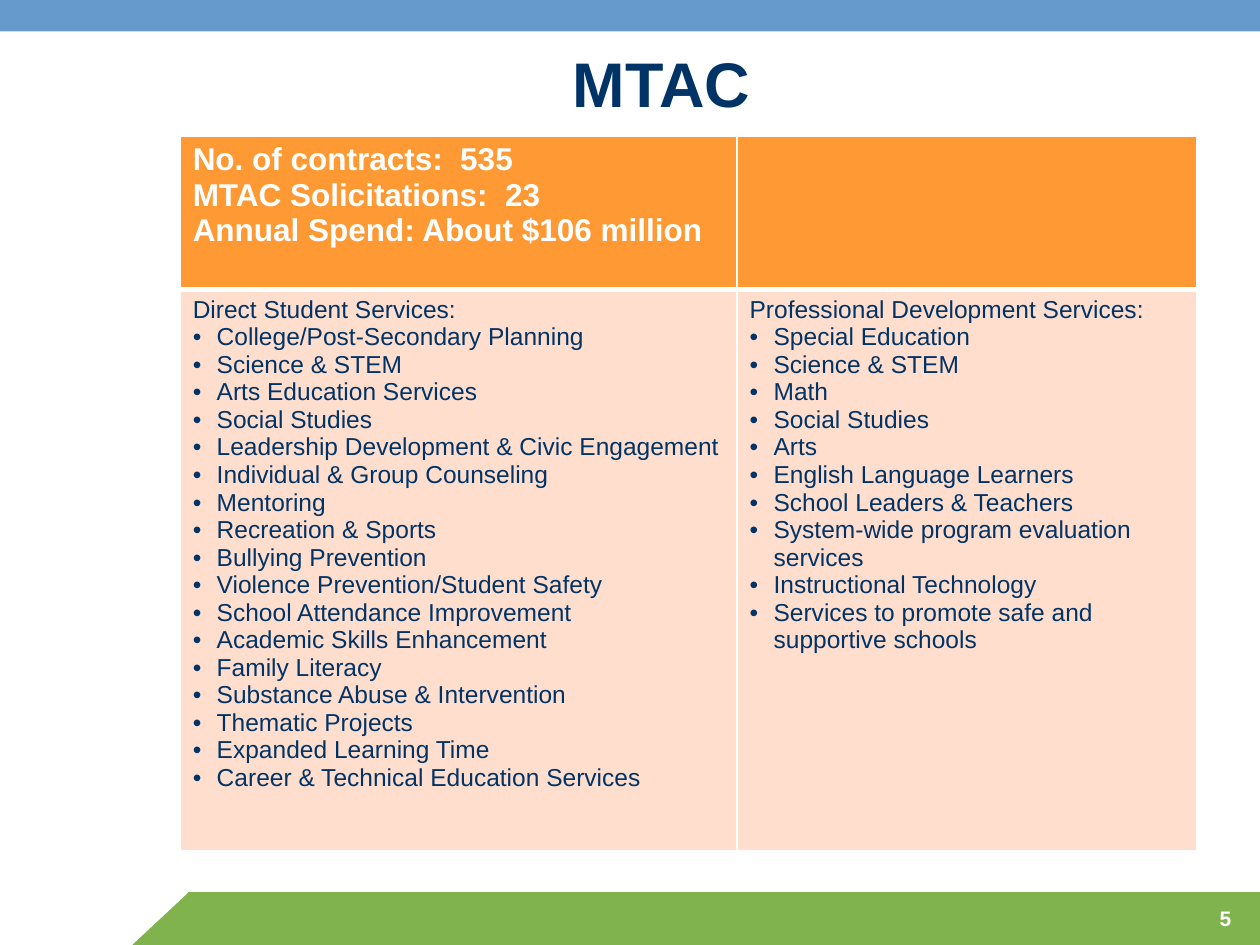
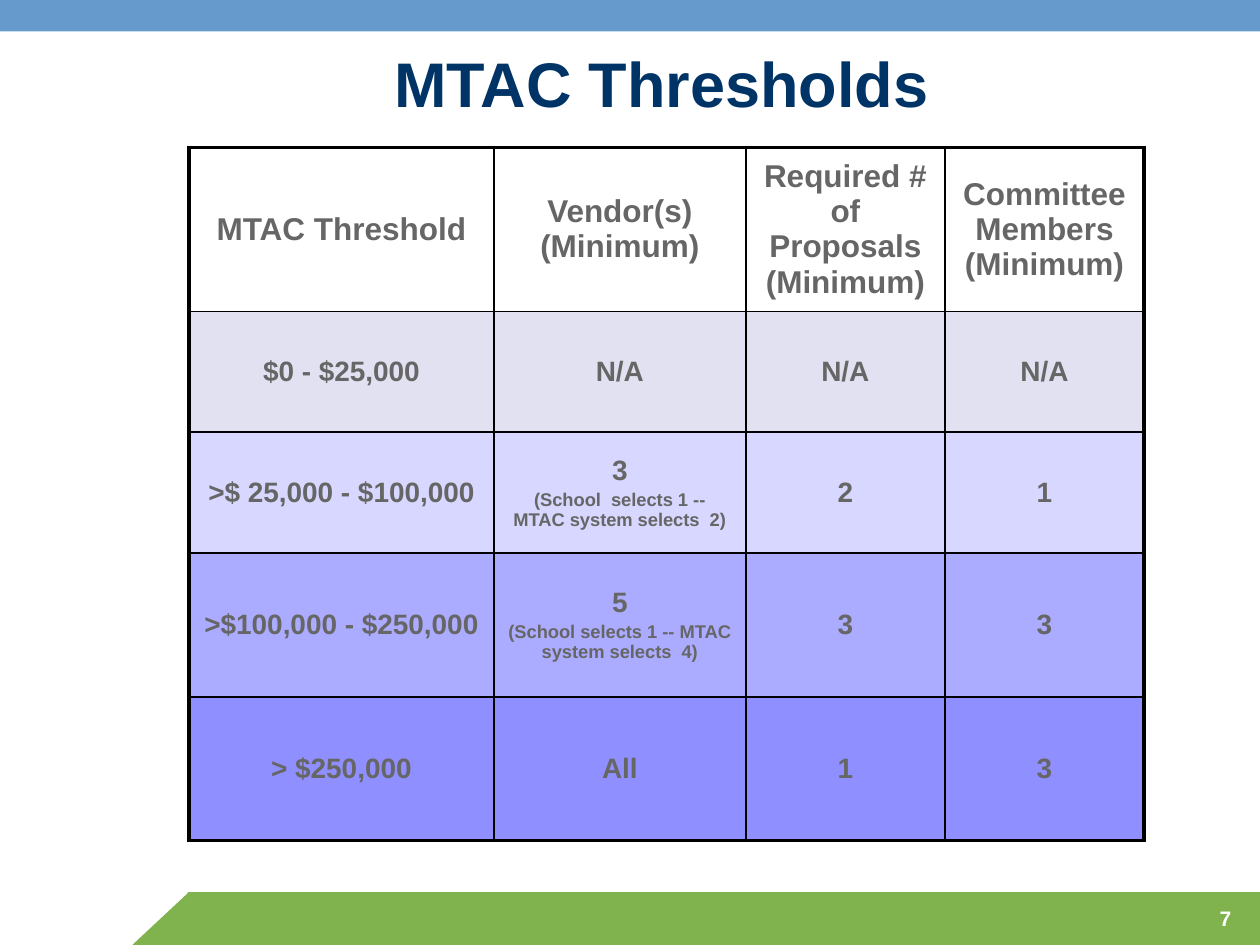
from lxml.etree import SubElement
from pptx import Presentation
from pptx.dml.color import RGBColor
from pptx.enum.shapes import MSO_SHAPE
from pptx.enum.text import MSO_ANCHOR, PP_ALIGN
from pptx.oxml.ns import qn
from pptx.util import Inches, Pt

RECT, TRIANGLE = MSO_SHAPE.RECTANGLE, MSO_SHAPE.RIGHT_TRIANGLE
TOP, MIDDLE, BOTTOM = MSO_ANCHOR.TOP, MSO_ANCHOR.MIDDLE, MSO_ANCHOR.BOTTOM
LEFT, CENTER, RIGHT = PP_ALIGN.LEFT, PP_ALIGN.CENTER, PP_ALIGN.RIGHT

FONT = "Arial"
WHITE, BLACK, NAVY, GRAY = "FFFFFF", "000000", "003366", "666666"
BLUE, GREEN, ORANGE, PEACH = "6699CC", "80B34D", "FF9933", "FFDECE"

TITLE = {"size": 36, "bold": True, "color": NAVY, "align": CENTER}
NUMBER = {"size": 12, "bold": True, "color": WHITE, "align": RIGHT}
SUMMARY = {"size": 18, "bold": True, "color": WHITE, "align": LEFT}
SERVICE = {"size": 14, "bold": False, "color": NAVY, "align": LEFT}
BULLET = {**SERVICE, "bullet": "•"}
HEADING = {"size": 18, "bold": True, "color": GRAY, "align": CENTER}
VALUE = {**HEADING, "size": 16}
NOTE = {**HEADING, "size": 10.5, "before": 2.1}

STUDENT_SERVICES = [
    "College/Post-Secondary Planning", "Science & STEM",
    "Arts Education Services", "Social Studies",
    "Leadership Development & Civic Engagement",
    "Individual & Group Counseling", "Mentoring", "Recreation & Sports",
    "Bullying Prevention", "Violence Prevention/Student Safety",
    "School Attendance Improvement", "Academic Skills Enhancement",
    "Family Literacy", "Substance Abuse & Intervention",
    "Thematic Projects", "Expanded Learning Time",
    "Career & Technical Education Services",
]
STAFF_SERVICES = [
    "Special Education", "Science & STEM", "Math", "Social Studies", "Arts",
    "English Language Learners", "School Leaders & Teachers",
    "System-wide program evaluation services", "Instructional Technology",
    "Services to promote safe and supportive schools",
]
THRESHOLD_HEADINGS = [
    "MTAC Threshold", "Vendor(s) (Minimum)",
    "Required # of Proposals (Minimum)", "Committee Members (Minimum)",
]
THRESHOLDS = [
    ["$0 - $25,000", "N/A", "N/A", "N/A"],
    [">$ 25,000 - $100,000",
     "3|(School  selects 1 -- MTAC system selects  2)", "2", "1"],
    [">$100,000 - $250,000",
     "5|(School selects 1 -- MTAC system selects  4)", "3", "3"],
    ["> $250,000", "All", "1", "3"],
]
THRESHOLD_FILLS = [None, "E1E1F1", "D7D7FF", "ABABFF", "8F8FFF"]


def rgb(color):
    return RGBColor.from_string(color)


class Deck:
    """Hold the shared style and the slide being built."""

    def __init__(self):
        self.prs = Presentation()
        self.prs.slide_width, self.prs.slide_height = Inches(10), Inches(7.5)
        self.slide = None

    def add_slide(self, title, number):
        self.slide = self.prs.slides.add_slide(self.prs.slide_layouts[5])
        self.band(RECT, 1.49, 7.08, 8.51, 0.42, GREEN)
        corner = self.band(TRIANGLE, 1.05, 7.08, 0.45, 0.42, GREEN)
        corner.element.spPr.get_or_add_xfrm().set("flipH", "1")
        self.band(RECT, 0, 0, 10, 0.25, BLUE)
        self.title(title)
        self.page_number(number)

    def band(self, kind, x, y, w, h, color):
        s = self.slide.shapes.add_shape(
            kind, Inches(x), Inches(y), Inches(w), Inches(h))
        s.shadow.inherit = False
        s.fill.solid()
        s.fill.fore_color.rgb = rgb(color)
        s.line.fill.background()
        return s

    def title(self, text):
        s = self.slide.shapes.title
        place = {"left": 1, "top": 0.33, "width": 8.5, "height": 0.67}
        for name, value in place.items():
            setattr(s, name, Inches(value))
        s.text_frame.word_wrap = True
        s.text_frame.vertical_anchor = BOTTOM
        self.paragraphs(s.text_frame, [(text, TITLE)])

    def page_number(self, number):
        s = self.slide.shapes.add_textbox(
            Inches(8.79), Inches(7.14), Inches(1.08), Inches(0.25))
        s.text_frame.word_wrap = True
        self.paragraphs(s.text_frame, [(str(number), NUMBER)])

    def paragraphs(self, tf, lines):
        for i, (text, style) in enumerate(lines):
            p = tf.add_paragraph() if i else tf.paragraphs[0]
            if "bullet" in style:
                pPr = p._p.get_or_add_pPr()
                indent = Inches(0.19)
                pPr.set("marL", str(indent))
                pPr.set("indent", str(-indent))
                SubElement(pPr, qn("a:buFont"), typeface=FONT)
                SubElement(pPr, qn("a:buChar"), char=style["bullet"])
            p.alignment = style["align"]
            if "before" in style:
                p.space_before = Pt(style["before"])
            r = p.add_run()
            r.text = text
            font = {"name": FONT, "size": Pt(style["size"]), "bold": style["bold"]}
            for name, value in font.items():
                setattr(r.font, name, value)
            r.font.color.rgb = rgb(style["color"])

    def borders(self, cell, color, widths):
        tcPr = cell._tc.get_or_add_tcPr()
        for side, width in widths.items():
            ln = SubElement(tcPr, qn(f"a:ln{side}"), w=str(Pt(width)))
            fill = SubElement(ln, qn("a:solidFill"))
            SubElement(fill, qn("a:srgbClr"), val=color)

    def table(self, x, y, cols, rows, cells, fills, anchor, color, outer, across):
        table = self.slide.shapes.add_table(
            len(rows), len(cols), Inches(x), Inches(y),
            Inches(sum(cols)), Inches(sum(rows))).table
        table.first_row = table.horz_banding = False
        for column, width in zip(table.columns, cols):
            column.width = Inches(width)
        for row, height in zip(table.rows, rows):
            row.height = Inches(height)
        last_row, last_col = len(rows) - 1, len(cols) - 1
        for i, row in enumerate(cells):
            for j, lines in enumerate(row):
                cell = table.cell(i, j)
                self.borders(cell, color, {
                    "L": 1 if j else outer,
                    "R": 1 if j < last_col else outer,
                    "T": across if i else outer,
                    "B": across if i < last_row else outer,
                })
                if fills[i]:
                    cell.fill.solid()
                    cell.fill.fore_color.rgb = rgb(fills[i])
                else:
                    cell.fill.background()
                cell.vertical_anchor = anchor
                self.paragraphs(cell.text_frame, lines)


def service_list(heading, services):
    return [(heading, SERVICE)] + [(name, BULLET) for name in services]


def threshold_cell(text):
    return list(zip(text.split("|"), (VALUE, NOTE)))


def build_overview(deck):
    deck.add_slide("MTAC", 5)
    summary = [(line, SUMMARY) for line in (
        "No. of contracts:  535",
        "MTAC Solicitations:  23",
        "Annual Spend: About $106 million",
    )]
    services = [
        service_list("Direct Student Services:", STUDENT_SERVICES),
        service_list("Professional Development Services:", STAFF_SERVICES),
    ]
    deck.table(1.43, 1.08, [4.42, 3.65], [1.22, 4.45],
               [[summary, []], services], [ORANGE, PEACH],
               TOP, WHITE, outer=1, across=3)


def build_thresholds(deck):
    deck.add_slide("MTAC Thresholds", 7)
    headings = [[(text, HEADING)] for text in THRESHOLD_HEADINGS]
    values = [[threshold_cell(text) for text in row] for row in THRESHOLDS]
    deck.table(1.5, 1.17, [2.42, 2, 1.58, 1.58],
               [1.24, 0.96, 0.96, 1.14, 1.14],
               [headings] + values, THRESHOLD_FILLS,
               MIDDLE, BLACK, outer=2.25, across=1)


def main():
    deck = Deck()
    build_overview(deck)
    build_thresholds(deck)
    deck.prs.save("out.pptx")


if __name__ == "__main__":
    main()
